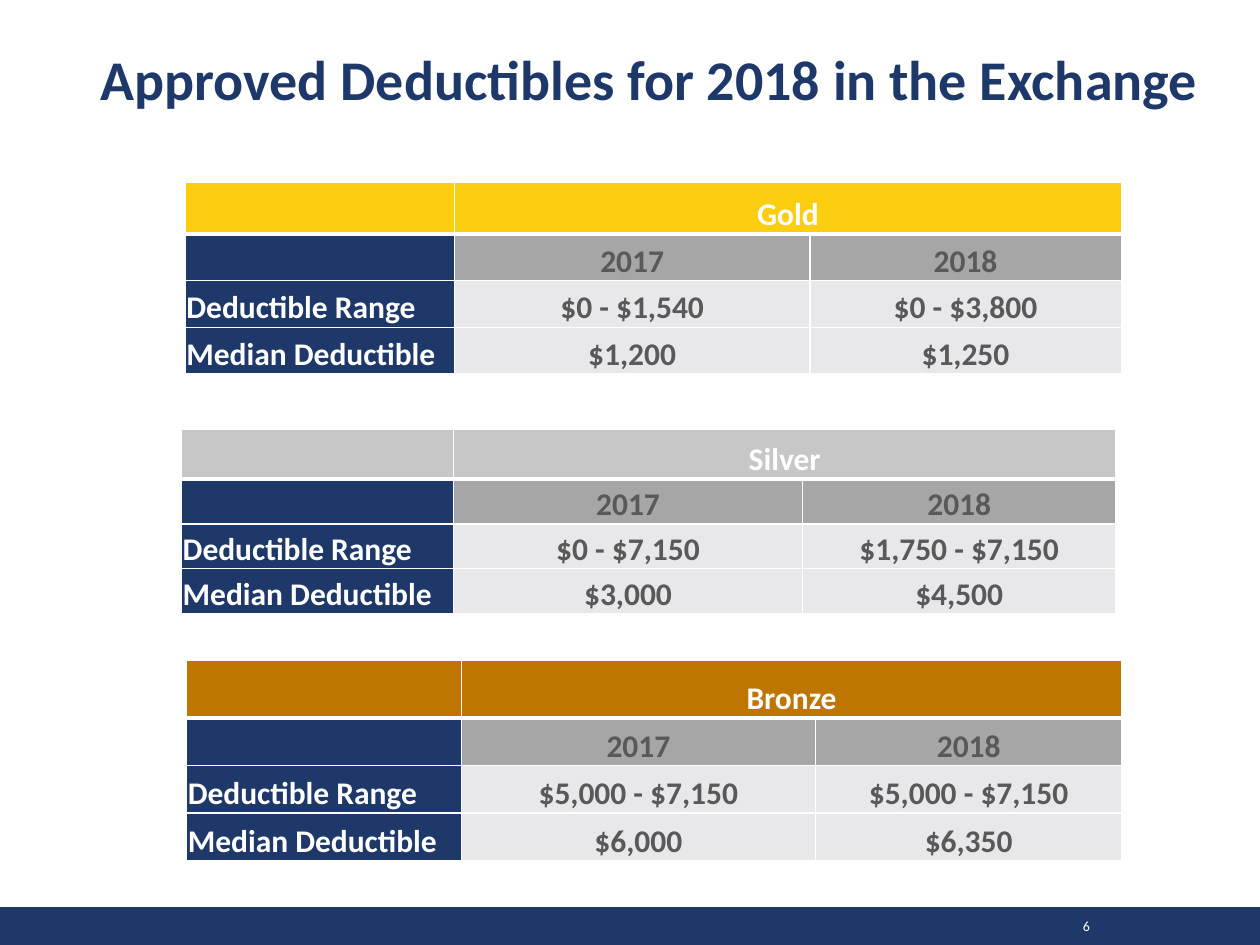
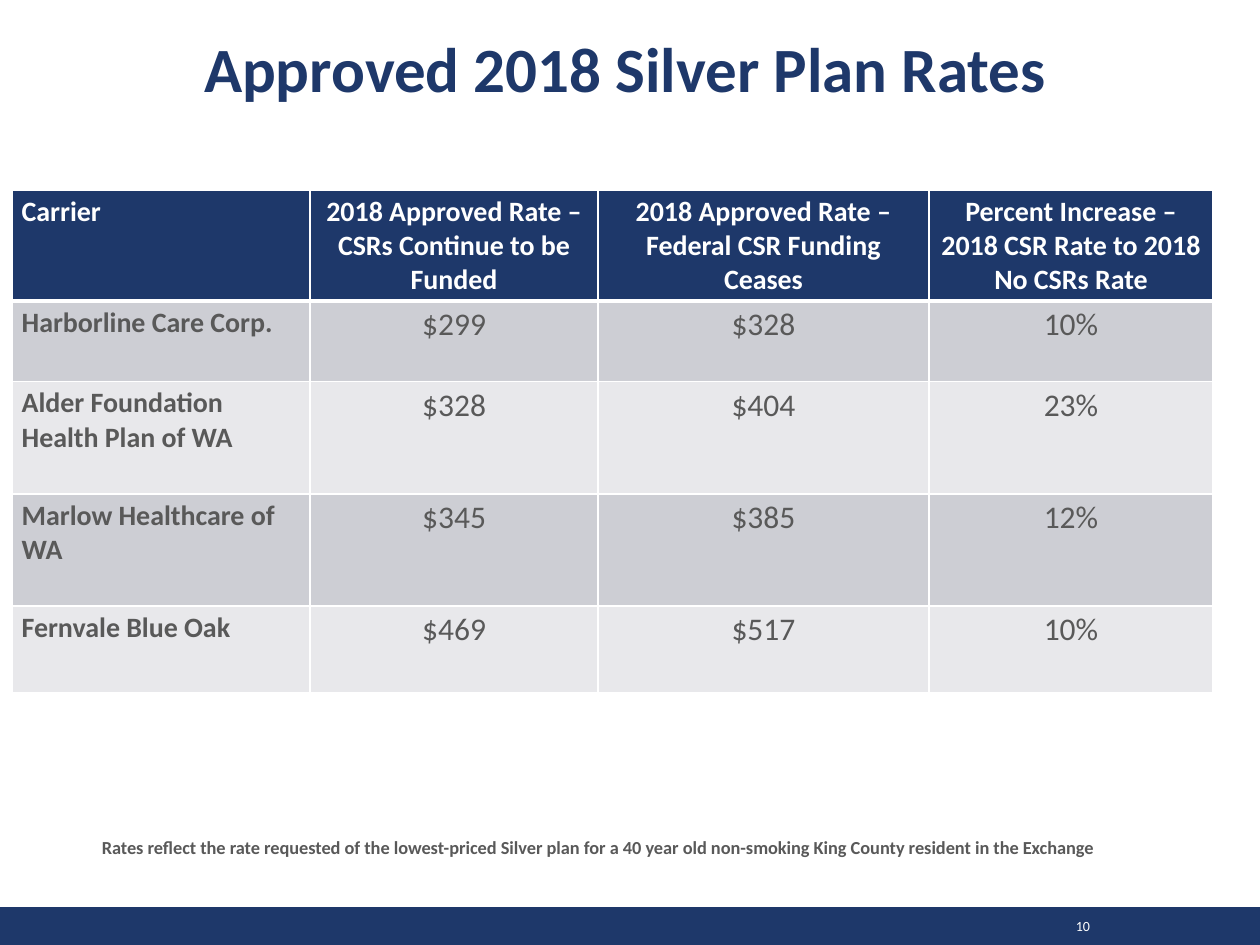
from dataclasses import dataclass
from typing import Any

import lxml.etree
import pptx
import pptx.dml.color
import pptx.enum.shapes
import pptx.enum.text
import pptx.oxml.ns
import pptx.util

Pt = pptx.util.Pt
RGBColor = pptx.dml.color.RGBColor
Align = pptx.enum.text.PP_ALIGN
Anchor = pptx.enum.text.MSO_ANCHOR

FONT = "Calibri"
WHITE = RGBColor(0xFF, 0xFF, 0xFF)
NAVY = RGBColor(0x1E, 0x38, 0x6A)
TEXT_GRAY = RGBColor(0x59, 0x59, 0x59)
YEAR_GRAY = RGBColor(0xA6, 0xA6, 0xA6)
LIGHT_GRAY = RGBColor(0xE8, 0xE8, 0xEB)
MID_GRAY = RGBColor(0xCD, 0xCE, 0xD4)
GOLD = RGBColor(0xFB, 0xCE, 0x11)
SILVER = RGBColor(0xC7, 0xC7, 0xC7)
BRONZE = RGBColor(0xBE, 0x76, 0x00)

SLIDE_WIDTH, SLIDE_HEIGHT = 720, 540
BAND_HEIGHT = 21.6
THIN_BORDER, HEADER_BORDER = 1, 3

TIGHT_CELL = {
    "margin_left": Pt(0.72), "margin_top": Pt(0.72),
    "margin_right": Pt(0.72), "margin_bottom": Pt(0),
    "vertical_anchor": Anchor.BOTTOM,
}
ROOMY_CELL = {
    "margin_left": Pt(5.2), "margin_top": Pt(2.6),
    "margin_right": Pt(5.2), "margin_bottom": Pt(2.6),
    "vertical_anchor": Anchor.TOP,
}


@dataclass(frozen=True)
class Box:
    left: float
    top: float
    width: float
    height: float

    def lengths(self) -> tuple:
        return Pt(self.left), Pt(self.top), Pt(self.width), Pt(self.height)


@dataclass(frozen=True)
class TextStyle:
    size: float
    color: RGBColor
    bold: bool = False
    align: Align = Align.LEFT


@dataclass(frozen=True)
class Grid:
    left: float
    top: float
    columns: tuple[float, ...]
    rows: tuple[float, ...]


@dataclass(frozen=True)
class MetalTier:
    name: str
    color: RGBColor
    grid: Grid
    ranges: tuple[str, str]
    medians: tuple[str, str]


TIERS = (
    MetalTier("Gold", GOLD,
              Grid(105.8, 104.4, (154, 203, 178), (29.3, 26.7, 26.7, 26.7)),
              ("$0 - $1,540", "$0 - $3,800"), ("$1,200", "$1,250")),
    MetalTier("Silver", SILVER,
              Grid(103.7, 245.5, (155.5, 199.5, 179), (28.3, 25.6, 25.6, 25.6)),
              ("$0 - $7,150", "$1,750 - $7,150"), ("$3,000", "$4,500")),
    MetalTier("Bronze", BRONZE,
              Grid(106.6, 377.3, (157, 202.5, 175), (33, 27.2, 27.2, 27.2)),
              ("$5,000 - $7,150", "$5,000 - $7,150"), ("$6,000", "$6,350")),
)

RATE_GRID = Grid(7.2, 108.7, (170, 164.6, 189, 162.5), (63.4, 46, 64.2, 64.2, 49.4))
RATE_HEADERS = (
    "Carrier",
    "2018 Approved Rate – CSRs Continue to be Funded",
    "2018 Approved Rate – Federal CSR Funding Ceases",
    "Percent Increase – 2018 CSR Rate to 2018 No CSRs Rate",
)
CARRIER_RATES = (
    ("Harborline Care Corp.", "$299", "$328", "10%"),
    ("Alder Foundation Health Plan of WA", "$328", "$404", "23%"),
    ("Marlow Healthcare of WA", "$345", "$385", "12%"),
    ("Fernvale Blue Oak", "$469", "$517", "10%"),
)
RATE_NOTE = (
    "Rates reflect the rate requested of the lowest-priced Silver plan for a "
    "40 year old non-smoking King County resident in the Exchange"
)


def apply_format(target: Any, values: dict[str, Any]) -> None:
    for name, value in values.items():
        setattr(target, name, value)


def write_text(text_frame: Any, text: str, style: TextStyle) -> Any:
    paragraph = text_frame.paragraphs[0]
    paragraph.alignment = style.align
    if text:
        run = paragraph.add_run()
        run.text = text
        apply_format(run.font, {"name": FONT, "size": Pt(style.size), "bold": style.bold})
        run.font.color.rgb = style.color
    return paragraph


def set_borders(cell: Any, top: float, bottom: float) -> None:
    properties = cell._tc.get_or_add_tcPr()
    qualified = pptx.oxml.ns.qn
    widths = {"a:lnL": THIN_BORDER, "a:lnR": THIN_BORDER, "a:lnT": top, "a:lnB": bottom}
    for tag, width in widths.items():
        line = lxml.etree.SubElement(properties, qualified(tag), w=str(int(Pt(width))))
        fill = lxml.etree.SubElement(line, qualified("a:solidFill"))
        lxml.etree.SubElement(fill, qualified("a:srgbClr"), val=str(WHITE))


def add_grid(slide: Any, grid: Grid, cell_format: dict[str, Any]) -> Any:
    """Add an empty table with white borders, thicker under the header row."""
    box = Box(grid.left, grid.top, sum(grid.columns), sum(grid.rows))
    table = slide.shapes.add_table(
        len(grid.rows), len(grid.columns), *box.lengths()
    ).table
    apply_format(table, {"first_row": False, "horz_banding": False})
    for column, width in zip(table.columns, grid.columns):
        column.width = Pt(width)
    for index, height in enumerate(grid.rows):
        table.rows[index].height = Pt(height)
        top = HEADER_BORDER if index == 1 else THIN_BORDER
        bottom = HEADER_BORDER if index == 0 else THIN_BORDER
        for cell in table.rows[index].cells:
            apply_format(cell, cell_format)
            set_borders(cell, top, bottom)
    return table


def fill_cell(cell: Any, text: str, fill: RGBColor, style: TextStyle) -> None:
    cell.fill.solid()
    cell.fill.fore_color.rgb = fill
    write_text(cell.text_frame, text, style)


def add_text_box(slide: Any, box: Box, text: str, style: TextStyle, anchor: Anchor) -> None:
    text_frame = slide.shapes.add_textbox(*box.lengths()).text_frame
    apply_format(text_frame, {"word_wrap": True, "vertical_anchor": anchor})
    write_text(text_frame, text, style)


def add_titled_slide(presentation: Any, title: str, box: Box, size: float, number: int) -> Any:
    """Add a slide with its title, footer band and slide number."""
    slide = presentation.slides.add_slide(presentation.slide_layouts.get_by_name("Title Only"))
    placeholder = slide.shapes.title
    apply_format(placeholder, dict(zip(("left", "top", "width", "height"), box.lengths())))
    apply_format(placeholder.text_frame, {
        "word_wrap": True,
        "vertical_anchor": Anchor.BOTTOM,
        "auto_size": pptx.enum.text.MSO_AUTO_SIZE.NONE,
    })
    style = TextStyle(size, NAVY, True, Align.CENTER)
    write_text(placeholder.text_frame, title, style).line_spacing = 0.9

    band_box = Box(0, SLIDE_HEIGHT - BAND_HEIGHT, SLIDE_WIDTH, BAND_HEIGHT)
    band = slide.shapes.add_shape(
        pptx.enum.shapes.MSO_SHAPE.RECTANGLE, *band_box.lengths()
    )
    band.shadow.inherit = False
    band.fill.solid()
    band.fill.fore_color.rgb = NAVY
    band.line.fill.background()
    add_text_box(slide, Box(584.6, 519.8, 45.4, 18), str(number),
                 TextStyle(8, WHITE, align=Align.RIGHT), Anchor.MIDDLE)
    return slide


def add_tier_table(slide: Any, tier: MetalTier) -> None:
    table = add_grid(slide, tier.grid, TIGHT_CELL)
    table.cell(0, 1).merge(table.cell(0, 2))
    label_style = TextStyle(18, WHITE, True)
    tier_style = TextStyle(18, WHITE, True, Align.CENTER)
    value_style = TextStyle(18, TEXT_GRAY, True, Align.CENTER)
    for column, text in enumerate(("", tier.name, "")):
        fill_cell(table.cell(0, column), text, tier.color, tier_style)
    body = (
        ("", ("2017", "2018"), YEAR_GRAY),
        ("Deductible Range", tier.ranges, LIGHT_GRAY),
        ("Median Deductible", tier.medians, LIGHT_GRAY),
    )
    for row, (label, values, fill) in enumerate(body, start=1):
        fill_cell(table.cell(row, 0), label, NAVY, label_style)
        for column, value in enumerate(values, start=1):
            fill_cell(table.cell(row, column), value, fill, value_style)


def add_rate_table(slide: Any) -> None:
    table = add_grid(slide, RATE_GRID, ROOMY_CELL)
    for column, header in enumerate(RATE_HEADERS):
        align = Align.CENTER if column else Align.LEFT
        fill_cell(table.cell(0, column), header, NAVY, TextStyle(16, WHITE, True, align))
    carrier_style = TextStyle(16, TEXT_GRAY, True)
    rate_style = TextStyle(18, TEXT_GRAY, align=Align.CENTER)
    for row, values in enumerate(CARRIER_RATES, start=1):
        fill = MID_GRAY if row % 2 else LIGHT_GRAY
        for column, value in enumerate(values):
            style = rate_style if column else carrier_style
            fill_cell(table.cell(row, column), value, fill, style)


def build_deductibles_slide(presentation: Any) -> None:
    slide = add_titled_slide(
        presentation, "Approved Deductibles for 2018 in the Exchange",
        Box(5, 0, 732.2, 67.7), 32, 6,
    )
    for tier in TIERS:
        add_tier_table(slide, tier)


def build_rates_slide(presentation: Any) -> None:
    slide = add_titled_slide(
        presentation, "Approved 2018 Silver Plan Rates ",
        Box(91.4, 27.4, 540, 36.7), 36, 10,
    )
    add_rate_table(slide)
    add_text_box(slide, Box(51.1, 474.5, 641.5, 32.4), RATE_NOTE,
                 TextStyle(10.5, TEXT_GRAY, True), Anchor.TOP)


def main() -> None:
    presentation = pptx.Presentation()
    presentation.slide_width = Pt(SLIDE_WIDTH)
    presentation.slide_height = Pt(SLIDE_HEIGHT)
    build_deductibles_slide(presentation)
    build_rates_slide(presentation)
    presentation.save("out.pptx")


if __name__ == "__main__":
    main()
